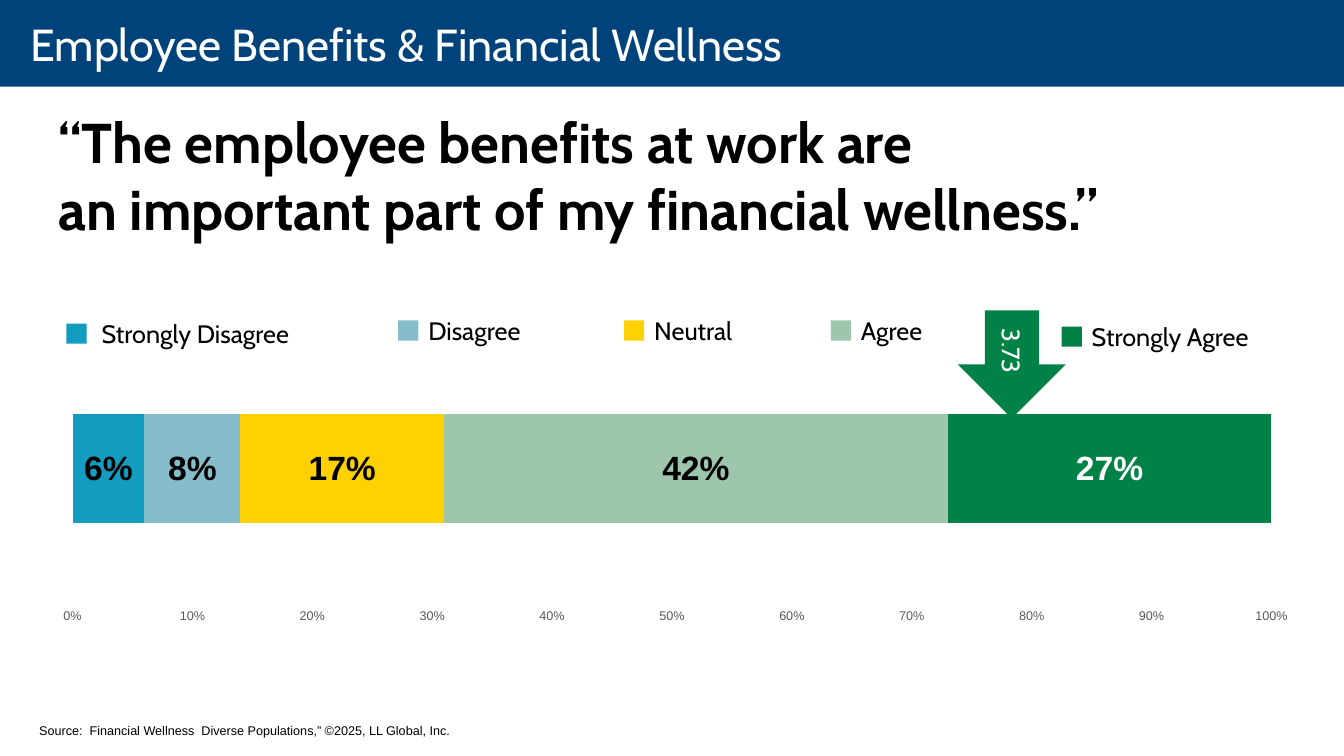
from pptx import Presentation
from pptx import util as u
from pptx.chart.data import CategoryChartData
from pptx.dml.color import RGBColor
from pptx.enum import chart as charts, shapes, text
from pptx.oxml import parse_xml
from pptx.oxml.ns import nsdecls

RATINGS = [
    ("Strongly Disagree", 0.06, "129DC0", "000000", (66, 321), 25, 210),
    ("Disagree", 0.08, "85BDCA", "000000", (395, 318), 20, 116),
    ("Neutral", 0.17, "FFD103", "000000", (619, 318), 20, 102),
    ("Agree", 0.42, "9EC6AD", "000000", (824, 318), 20, 83),
    ("Strongly Agree", 0.27, "008145", "FFFFFF", (1053, 324), 20, 176),
]


def px(count):
    return u.Emu(count * 9144)


def color(code):
    return RGBColor.from_string(code)


class SurveySlide:
    """Holds the slide and its style, and adds each kind of element."""

    heading = "Cabin"
    plain = "Arial"

    def __init__(self, deck):
        self.page = deck.slides.add_slide(deck.slide_layouts[5])

    def style(self, font, size, code, name, bold=False):
        font.size, font.name, font.bold = u.Pt(size), name, bold
        font.color.rgb = color(code)

    def fill_text(self, frame, lines, *style):
        frame.text = "\n".join(lines)
        for para in frame.paragraphs:
            para.alignment = text.PP_ALIGN.LEFT
            self.style(para.font, *style)

    def shape(self, kind, at, fill):
        box = self.page.shapes.add_shape(kind, *map(px, at))
        box.shadow.inherit = False
        box.fill.solid()
        box.fill.fore_color.rgb = color(fill)
        box.line.fill.background()
        return box

    def label(self, at, lines, *style, wrap=False):
        box = self.page.shapes.add_textbox(*map(px, at))
        frame = box.text_frame
        frame.word_wrap = wrap
        frame.auto_size = text.MSO_AUTO_SIZE.SHAPE_TO_FIT_TEXT
        self.fill_text(frame, lines, *style)
        return box

    def title(self, words):
        band = self.shape(shapes.MSO_SHAPE.RECTANGLE, (0, 0, 1333, 86), "00437B")
        self.page.shapes._spTree.insert(2, band._element)
        box = self.page.shapes.title
        box.left, box.top, box.width, box.height = map(px, (0, -5, 1333, 97))
        frame = box.text_frame
        frame.margin_left, frame.margin_right = px(30), px(20)
        frame.margin_top = frame.margin_bottom = 0
        frame.vertical_anchor = text.MSO_ANCHOR.MIDDLE
        frame.word_wrap = False
        frame.auto_size = text.MSO_AUTO_SIZE.NONE
        self.fill_text(frame, [words], 32, "FFFFFF", self.heading)

    def legend_key(self, name, fill, corner, gap, width):
        left, top = corner
        swatch = self.shape(shapes.MSO_SHAPE.RECTANGLE, (left, top, 20, 20), fill)
        label = self.label((left + gap, top - 10, width, 40), [name],
                           18, "000000", self.heading)
        self.page.shapes.add_group_shape([swatch, label])

    def score_arrow(self, at, score, fill):
        arrow = self.shape(shapes.MSO_SHAPE.UP_ARROW, at, fill)
        arrow.rotation = 180
        frame = arrow.text_frame
        self.fill_text(frame, [score], 18, "FFFFFF", self.heading)
        frame.paragraphs[0].alignment = text.PP_ALIGN.CENTER
        frame.vertical_anchor = text.MSO_ANCHOR.MIDDLE
        frame._txBody.bodyPr.set("vert", "vert270")

    def rating_chart(self, at, ratings):
        data = CategoryChartData(number_format="0%")
        data.categories = ["1"]
        for number, rating in enumerate(ratings, 1):
            data.add_series(f"Series {number}", [rating[1]])
        chart = self.page.shapes.add_chart(
            charts.XL_CHART_TYPE.BAR_STACKED_100, *map(px, at), data).chart
        chart.has_legend = chart.has_title = False
        self.style(chart.font, 10, "000000", self.plain)
        chart.category_axis.visible = False
        axis = chart.value_axis
        axis.has_major_gridlines = False
        axis.major_tick_mark = axis.minor_tick_mark = charts.XL_TICK_MARK.NONE
        axis.maximum_scale, axis.major_unit = 1, 0.1
        axis.format.line.fill.background()
        axis.tick_labels.number_format = "0%"
        axis.tick_labels.number_format_is_linked = False
        self.style(axis.tick_labels.font, 9, "595959", self.plain)
        plot = chart.plots[0]
        plot.gap_width, plot.overlap = 150, 100
        plot.vary_by_categories = False
        for series, (_, _, fill, ink, *_) in zip(plot.series, ratings):
            series.format.fill.solid()
            series.format.fill.fore_color.rgb = color(fill)
            labels = series.data_labels
            labels.show_value = True
            labels.position = charts.XL_LABEL_POSITION.CENTER
            labels.number_format = "0%"
            labels.number_format_is_linked = False
            self.style(labels.font, 24, ink, self.plain, True)
        self.place_plot(chart, x=0.03, y=0.02, w=0.94, h=0.9)

    def place_plot(self, chart, **fractions):
        area = chart._chartSpace.chart.plotArea
        for layout in area.xpath("c:layout"):
            area.remove(layout)
        sizes = "".join(f'<c:{key} val="{value}"/>' for key, value in fractions.items())
        area.insert(0, parse_xml(
            f'<c:layout {nsdecls("c")}><c:manualLayout><c:layoutTarget val="inner"/>'
            f'<c:xMode val="edge"/><c:yMode val="edge"/>{sizes}'
            '</c:manualLayout></c:layout>'))


def main():
    deck = Presentation()
    deck.slide_width, deck.slide_height = px(1333), px(750)
    slide = SurveySlide(deck)
    slide.title("Employee Benefits & Financial Wellness")
    slide.rating_chart((34, 324, 1265, 300), RATINGS)
    slide.score_arrow((950, 308, 107, 107), "3.73", "008145")
    for name, _, fill, _, corner, gap, width in RATINGS:
        slide.legend_key(name, fill, corner, gap, width)
    slide.label((48, 102, 1129, 145),
                ["“The employee benefits at work are",
                 "an important part of my financial wellness.”"],
                40, "000000", slide.heading, True)
    slide.label((29, 712, 519, 25),
                ["Source:  Financial Wellness  Diverse Populations,” ©2025, LL Global, Inc."],
                9, "000000", slide.plain, wrap=True)
    deck.save("out.pptx")


if __name__ == "__main__":
    main()
